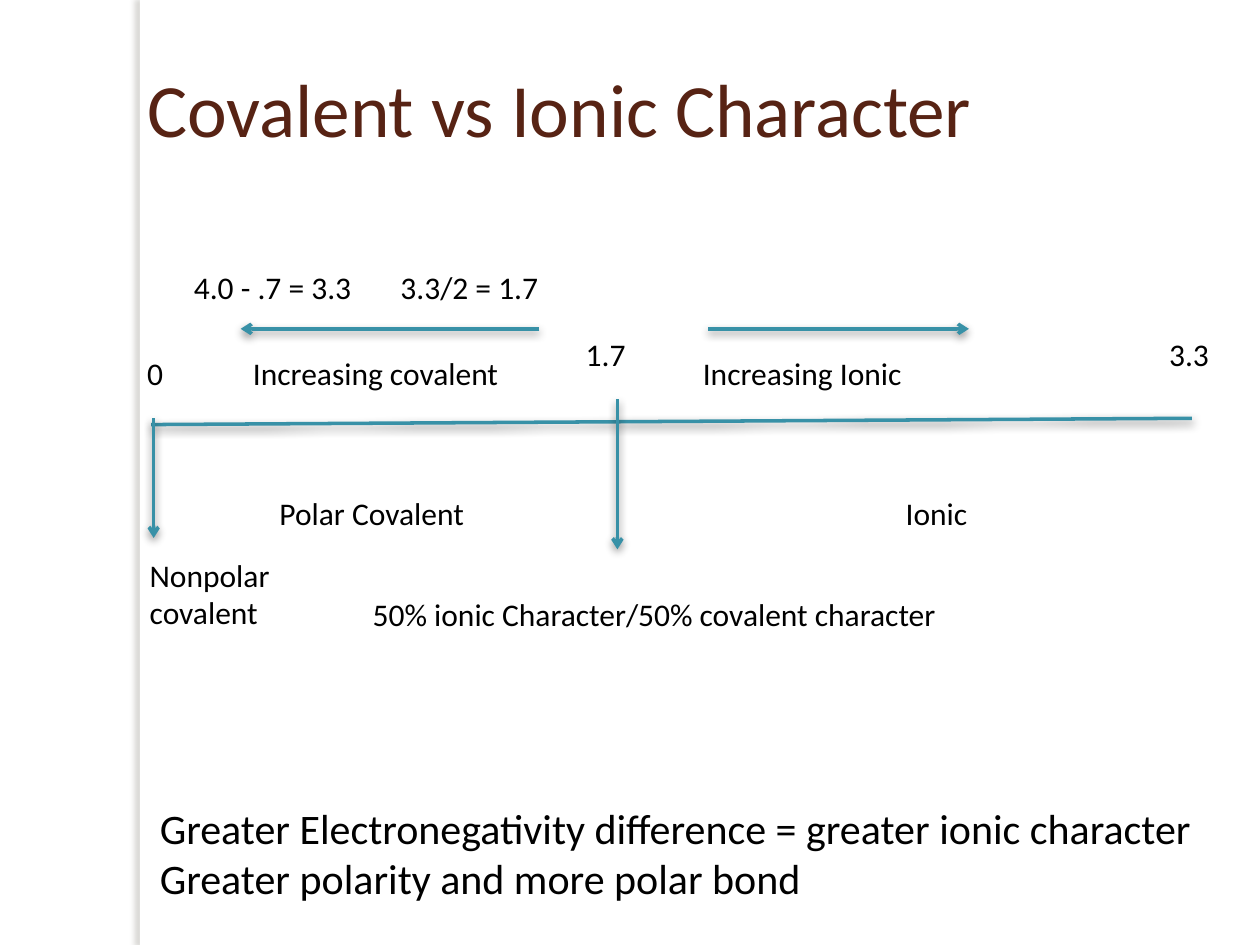
from dataclasses import dataclass

from lxml.etree import SubElement
from pptx import Presentation
from pptx.dml.color import RGBColor
from pptx.enum.shapes import MSO_CONNECTOR, MSO_SHAPE
from pptx.enum.text import MSO_ANCHOR
from pptx.oxml import parse_xml
from pptx.oxml.ns import nsdecls, qn
from pptx.util import Inches, Pt


@dataclass(frozen=True)
class Theme:
    font: str = "Calibri"
    title: str = "572314"
    ink: str = "000000"
    line: str = "3891A7"
    paper: str = "FFFFFF"
    shade: str = "736F63"
    head: int = 43
    large: int = 24
    body: int = 18
    width: int = 2


THEME = Theme()

LABELS = [
    ("Nonpolar\ncovalent", 1.09, 4.36, 1.96, 0.71),
    ("Polar Covalent", 2.12, 3.87, 1.94, 0.4),
    ("Ionic", 7.09, 3.87, 1.14, 0.4),
    ("0", 1.07, 2.76, 0.4, 0.4),
    ("1.7", 4.55, 2.61, 0.8, 0.4),
    ("3.3", 9.18, 2.61, 0.82, 0.4),
    ("4.0 - .7 = 3.3", 1.44, 2.08, 1.6, 0.4),
    ("3.3/2 = 1.7", 3.08, 2.08, 1.6, 0.4),
    ("50% ionic Character/50% covalent character", 2.86, 4.67, 5, 0.4),
    ("Increasing Ionic", 5.48, 2.76, 3.52, 0.4),
    ("Increasing covalent", 1.91, 2.76, 2.64, 0.4),
]

ARROWS = [
    (1.22, 3.32, 1.22, 4.27),
    (4.9, 3.17, 4.9, 4.36),
    (5.62, 2.61, 7.69, 2.61),
    (4.28, 2.61, 1.91, 2.61),
]


def apply(item, values):
    for name, value in values.items():
        setattr(item, name, value)


def add_shade(shape, color, alpha, blur, dist, angle):
    shape._element.spPr.append(parse_xml(
        f'<a:effectLst {nsdecls("a")}>'
        f'<a:outerShdw blurRad="{Pt(blur)}" dist="{Pt(dist)}" '
        f'dir="{angle * 60000}" rotWithShape="0">'
        f'<a:srgbClr val="{color}"><a:alpha val="{alpha * 1000}"/></a:srgbClr>'
        '</a:outerShdw></a:effectLst>'))


def add_strip(slide):
    strip = slide.shapes.add_shape(
        MSO_SHAPE.RECTANGLE, Inches(1.11), 0, Inches(0.08), Inches(7.5))
    strip.fill.solid()
    strip.fill.fore_color.rgb = RGBColor.from_string(THEME.paper)
    strip.line.fill.background()
    add_shade(strip, THEME.shade, 25, 3, 3, 180)


def add_text(slide, text, left, top, width, height,
             size=THEME.body, color=THEME.ink, anchor=MSO_ANCHOR.TOP):
    box = slide.shapes.add_textbox(*map(Inches, (left, top, width, height)))
    frame = box.text_frame
    apply(frame, {"word_wrap": True, "vertical_anchor": anchor, "text": text})
    for para in frame.paragraphs:
        apply(para.font, {"name": THEME.font, "size": Pt(size)})
        para.font.color.rgb = RGBColor.from_string(color)


def add_line(slide, ends, arrow=True):
    line = slide.shapes.add_connector(MSO_CONNECTOR.STRAIGHT, *map(Inches, ends))
    line.line.width = Pt(THEME.width)
    line.line.color.rgb = RGBColor.from_string(THEME.line)
    if arrow:
        SubElement(line.line._get_or_add_ln(), qn("a:tailEnd"), type="arrow")
    add_shade(line, THEME.ink, 43, 5, 2, 90)


def main():
    deck = Presentation()
    apply(deck, {"slide_width": Inches(10), "slide_height": Inches(7.5)})
    slide = deck.slides.add_slide(deck.slide_layouts[6])
    add_strip(slide)
    add_text(slide, "Covalent vs Ionic Character", 1.07, 0.12, 7.73, 1.46,
             THEME.head, THEME.title, MSO_ANCHOR.MIDDLE)
    add_line(slide, (1.2, 3.37, 9.46, 3.32), arrow=False)
    for ends in ARROWS:
        add_line(slide, ends)
    for label in LABELS:
        add_text(slide, *label)
    add_text(slide, "Greater Electronegativity difference = greater ionic character\n"
             "Greater polarity and more polar bond", 1.17, 6.32, 8.8, 0.91, THEME.large)
    deck.save("out.pptx")


if __name__ == "__main__":
    main()
